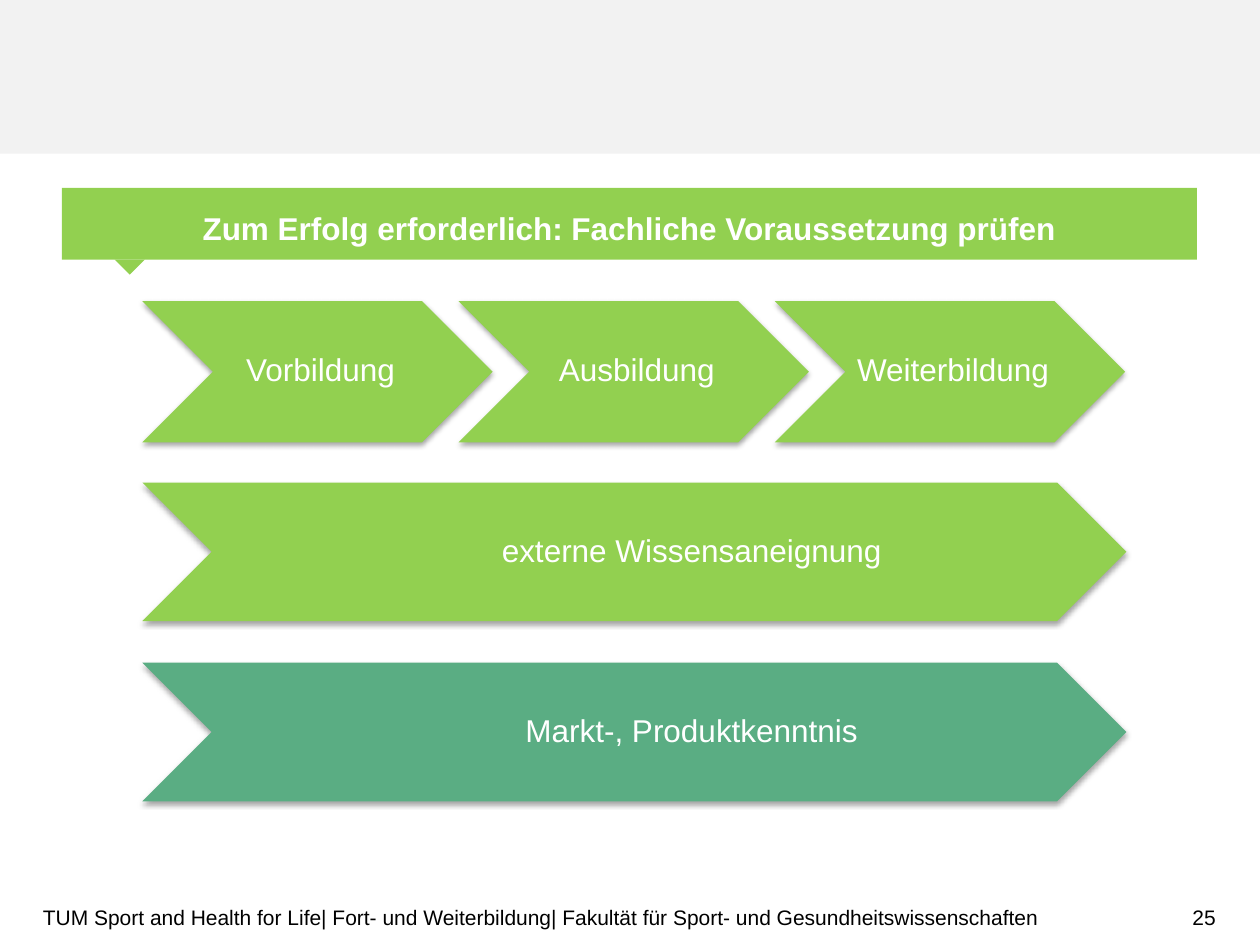
from lxml.etree import fromstring
from pptx import Presentation
from pptx.dml.color import RGBColor
from pptx.enum.shapes import MSO_SHAPE
from pptx.enum.text import MSO_ANCHOR, MSO_AUTO_SIZE, PP_ALIGN
from pptx.util import Emu, Pt

SCALE = 9144
GREEN, TEAL, GREY = "92D050", "5AAD83", "F2F2F2"
WHITE, BLACK = "FFFFFF", "000000"
SHADE = (
    '<a:effectLst xmlns:a="http://schemas.openxmlformats.org/drawingml/2006/main">'
    '<a:outerShdw blurRad="39370" dist="22860" dir="5400000" rotWithShape="0">'
    '<a:srgbClr val="000000"><a:alpha val="35000"/></a:srgbClr>'
    '</a:outerShdw></a:effectLst>'
)


def px(size):
    return Emu(size * SCALE)


def tint(code):
    return RGBColor.from_string(code)


def apply(item, values):
    for name, value in values.items():
        setattr(item, name, value)


def place(shape, box):
    apply(shape, dict(zip(("left", "top", "width", "height"), map(px, box))))


def write(shape, text, color, size, align, pads, bold=False, space=1.0):
    sides = ("margin_left", "margin_top", "margin_right", "margin_bottom")
    frame = shape.text_frame
    frame.text = text
    apply(frame, dict(zip(sides, map(px, pads))))
    apply(frame, {"word_wrap": True, "auto_size": MSO_AUTO_SIZE.NONE,
                  "vertical_anchor": MSO_ANCHOR.MIDDLE})
    line = frame.paragraphs[0]
    apply(line, {"alignment": align, "line_spacing": space})
    apply(line.font, {"name": "Arial", "size": Pt(size), "bold": bold})
    line.font.color.rgb = tint(color)


def draw(shapes, kind, box, color):
    shape = shapes.add_shape(kind, *map(px, box))
    shape.fill.solid()
    shape.fill.fore_color.rgb = tint(color)
    shape.line.fill.background()
    shape.shadow.inherit = False
    return shape


def label(shapes, box, *form, **more):
    write(shapes.add_textbox(*map(px, box)), *form, **more)


def banner(slide, box, text):
    left, top, width, height = box
    title = slide.shapes.title
    place(title, box)
    title.fill.solid()
    title.fill.fore_color.rgb = tint(GREEN)
    write(title, text, WHITE, 18, PP_ALIGN.CENTER, (10, 5, 10, 5),
          bold=True, space=1.2)
    tip = draw(slide.shapes, MSO_SHAPE.ISOSCELES_TRIANGLE,
               (left + 42, top + height, 24, 12), GREEN)
    tip.rotation = 180


def arrow(shapes, box, text, color, shift):
    left, top, width, height = box
    shape = draw(shapes, MSO_SHAPE.CHEVRON, box, color)
    props = shape.element.spPr
    props.remove(props.find("{*}effectLst"))
    props.append(fromstring(SHADE))
    half = height // 2
    label(shapes, (left + half, top, width - 2 * half, height), text, WHITE,
          18, PP_ALIGN.CENTER, (8 + shift, 3, 3, 3), space=0.9)


def chain(slide, box, words, color, shift=0):
    left, top, width, height = box
    group = slide.shapes.add_group_shape()
    lap = height * 4 // 10 - 17
    count = len(words)
    each = (width + (count - 1) * lap) // count
    for spot, word in enumerate(words):
        part = (left + spot * (each - lap), top, each, height)
        arrow(group.shapes, part, word, color, shift)


def footer(slide, box, text, number):
    left, top, width, height = box
    pads = (0, 5, 0, 5)
    label(slide.shapes, (left, top, 855, height), text, BLACK, 12,
          PP_ALIGN.LEFT, pads)
    label(slide.shapes, (left + width - 60, top, 60, height), number, BLACK,
          12, PP_ALIGN.RIGHT, pads)


def main():
    deck = Presentation()
    apply(deck, {"slide_width": px(1000), "slide_height": px(750)})
    slide = deck.slides.add_slide(deck.slide_layouts[5])
    draw(slide.shapes, MSO_SHAPE.RECTANGLE, (0, 0, 1000, 122), GREY)
    banner(slide, (49, 149, 901, 57),
           "Zum Erfolg erforderlich: Fachliche Voraussetzung prüfen")
    chain(slide, (113, 239, 781, 112),
          ("Vorbildung", "Ausbildung", "Weiterbildung"), GREEN)
    chain(slide, (113, 383, 781, 110), ("externe Wissensaneignung",), GREEN, 86)
    chain(slide, (113, 526, 781, 110), ("Markt-, Produktkenntnis",), TEAL, 86)
    footer(slide, (34, 708, 931, 40),
           "TUM Sport and Health for Life| Fort- und Weiterbildung| "
           "Fakultät für Sport- und Gesundheitswissenschaften", "25")
    deck.save("out.pptx")


if __name__ == "__main__":
    main()
